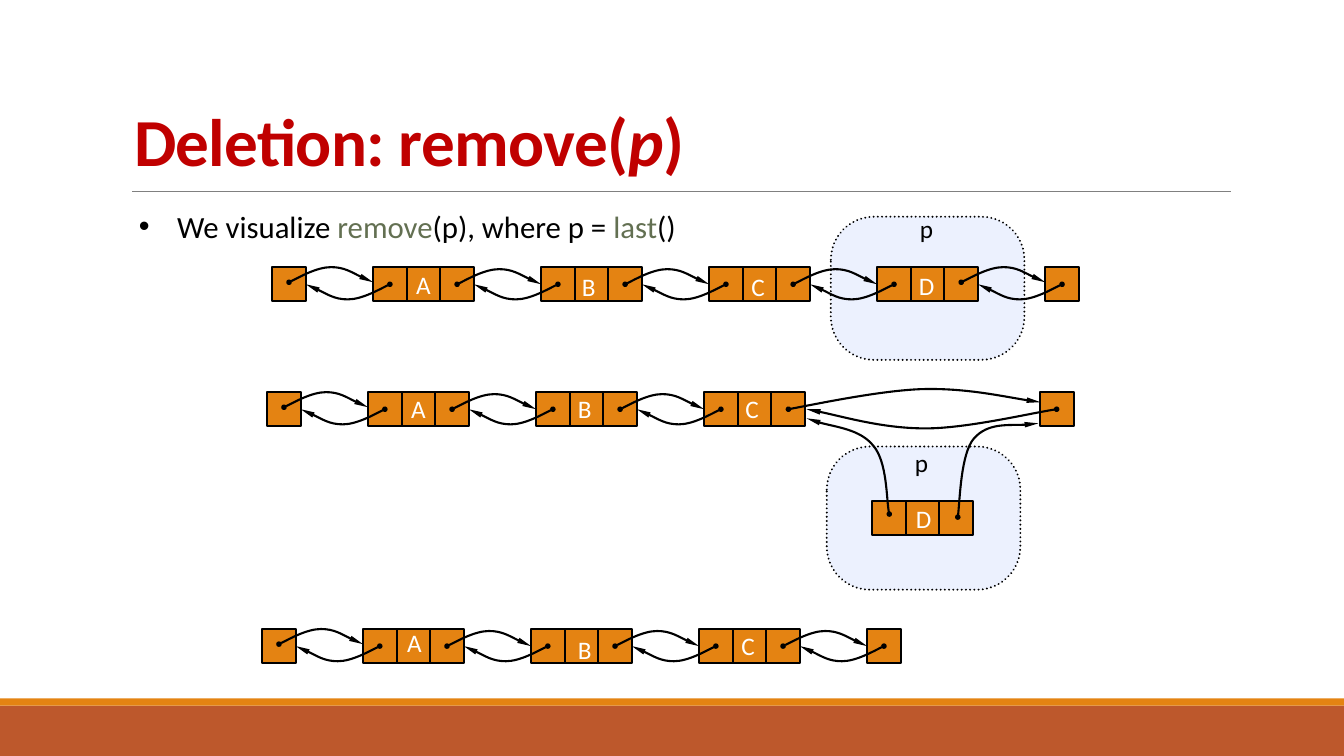
"""Build the slide on removing the last node of a doubly linked list."""
from lxml import etree
from pptx import Presentation, util as u
from pptx.dml.color import RGBColor
from pptx.enum import dml, shapes, text
from pptx.oxml.ns import qn

BLACK = RGBColor(0, 0, 0)
WHITE = RGBColor(255, 255, 255)
RED = RGBColor(0xC0, 0, 0)
OLIVE = RGBColor(0x63, 0x70, 0x52)
GREY = RGBColor(0x80, 0x80, 0x80)
ORANGE = RGBColor(0xE4, 0x83, 0x12)
RUST = RGBColor(0xBD, 0x58, 0x2C)
PALE = RGBColor(0xEC, 0xF1, 0xFE)
CELL = 1 / 3
LABEL = 0.4


def write(tf, runs, size=18, bold=False, align=None, anchor=text.MSO_ANCHOR.TOP, spacing=None):
    """Fill a text frame with (words, colour, italic) runs."""
    tf.word_wrap = True
    tf.vertical_anchor = anchor
    p = tf.paragraphs[0]
    p.alignment = align
    for words, color, italic in runs:
        r = p.add_run()
        r.text = words
        r.font.name, r.font.size = "Calibri", u.Pt(size)
        r.font.bold, r.font.italic = bold, italic
        r.font.color.rgb = color
        if spacing is not None:
            r._r.get_or_add_rPr().set("spc", str(spacing))
    return p


def shape(owner, kind, box, fill, outline=None):
    """Add a filled preset shape, box in inches."""
    sp = owner.shapes.add_shape(kind, *map(u.Inches, box))
    sp.shadow.inherit = False
    sp.fill.solid()
    sp.fill.fore_color.rgb = fill
    if outline is None:
        sp.line.fill.background()
    else:
        sp.line.color.rgb = outline
        sp.line.width = u.Pt(1.5)
    return sp


prs = Presentation()
prs.slide_width, prs.slide_height = u.Inches(13.33), u.Inches(7.5)
s = prs.slides.add_slide(prs.slide_layouts[5])

for top, height, color in ((7, 0.5, RUST), (6.93, 0.07, ORANGE)):
    shape(s, shapes.MSO_SHAPE.RECTANGLE, (0, top, 13.33, height), color)

rule = s.shapes.add_connector(shapes.MSO_CONNECTOR.STRAIGHT, u.Inches(1.31), u.Inches(1.9),
                              u.Inches(12.21), u.Inches(1.9))
rule.line.color.rgb = GREY
rule.line.width = u.Pt(0.5)
etree.SubElement(rule._element.spPr, qn("a:effectLst"))

title = s.shapes.title
title.left, title.top, title.width, title.height = map(u.Inches, (1.23, 0.25, 11, 1.59))
p = write(title.text_frame, [("Deletion: remove(", RED, False), ("p", RED, True), (")", RED, False)],
          size=48, bold=True, align=text.PP_ALIGN.LEFT, anchor=text.MSO_ANCHOR.BOTTOM, spacing=-50)
p.line_spacing = 0.85

body = s.shapes.add_textbox(*map(u.Inches, (1.28, 2.01, 8.5, 0.5)))
p = write(body.text_frame, [("We visualize ", BLACK, False), ("remove", OLIVE, False),
                            ("(p), where p = ", BLACK, False), ("last", OLIVE, False),
                            ("()", BLACK, False)], size=22)
p.space_before = u.Pt(4.4)
pPr = p._p.get_or_add_pPr()
pPr.set("marL", str(u.Inches(0.38)))
pPr.set("indent", str(u.Inches(-0.38)))
etree.SubElement(pPr, qn("a:buFont"), typeface="Arial")
etree.SubElement(pPr, qn("a:buChar"), char="•")

detour = [
    [(7.82, 4.06), (8.04, 4.02), (8.75, 3.87), (9.16, 3.86), (9.58, 3.85), (10.08, 3.96), (10.32, 3.99)],
    [(10.48, 4.06), (10.26, 4.09), (9.59, 4.25), (9.18, 4.25), (8.76, 4.25), (8.24, 4.1), (8, 4.06)],
    [(8.82, 5.1), (8.79, 4.99), (8.8, 4.58), (8.66, 4.42), (8.53, 4.26), (8.13, 4.21), (8, 4.15)],
    [(9.5, 5.13), (9.52, 5), (9.53, 4.5), (9.66, 4.35), (9.8, 4.19), (10.17, 4.23), (10.3, 4.2)],
]
removed = [(8.65 + i * CELL, 4.97) for i in range(3)]
arc = [(0, 0), (0.08, 0.2), (0.33, 1), (0.5, 1), (0.66, 1), (0.9, 0.2), (1, 0)]
chains = [
    (2.7, 2.65, 4, 23, 5, (8.24, 2.15), [], [],
     [("A", 4, 2.62), ("B", 5.64, 2.64), ("C", 7.32, 2.64), ("D", 8.99, 2.63), ("p", 8.99, 2.07)]),
    (2.65, 3.89, 3, 23, 3, (8.2, 4.43), removed, detour,
     [("A", 3.95, 3.85), ("B", 5.6, 3.85), ("C", 7.26, 3.85), ("D", 8.96, 4.94), ("p", 8.94, 4.39)]),
    (2.6, 6.24, 3, 18, 4, None, [], [],
     [("A", 3.91, 6.17), ("B", 5.6, 6.24), ("C", 7.22, 6.2)]),
]
for left, top, nodes, trailer, pairs, region, extra_cells, extra_links, labels in chains:
    group = s.shapes.add_group_shape()
    if region:
        sp = shape(group, shapes.MSO_SHAPE.ROUNDED_RECTANGLE, (*region, 1.92, 1.42), PALE, BLACK)
        sp.adjustments[0] = 0.301
        sp.line.dash_style = dml.MSO_LINE.ROUND_DOT
        sp.line._get_or_add_ln().set("cap", "rnd")

    columns = [0, trailer] + [3 + 5 * n + i for n in range(nodes) for i in range(3)]
    for cell in [(left + c * CELL, top) for c in columns] + extra_cells:
        shape(group, shapes.MSO_SHAPE.RECTANGLE, (*cell, CELL, CELL), ORANGE, BLACK)

    links = list(extra_links)
    for n in range(pairs):
        rise = 0.15 if n in (0, 4) else 0.17
        for column, span, y, bulge in ((0.5, 2.5, rise, -0.15), (3.5, -2.5, 0.17, 0.15)):
            x = left + (5 * n + column) * CELL
            links.append([(x + a * span * CELL, top + y + b * bulge) for a, b in arc])
    for pts in links:
        start, *rest = [(u.Inches(x), u.Inches(y)) for x, y in pts]
        fb = group.shapes.build_freeform(*start)
        fb.add_line_segments(rest, close=False)
        sp = fb.convert_to_shape()
        sp.shadow.inherit = False
        sp.fill.background()
        sp.line.color.rgb = BLACK
        sp.line.width = u.Pt(1.5)
        ln = sp.line._get_or_add_ln()
        etree.SubElement(ln, qn("a:headEnd"), type="oval", w="sm", len="sm")
        etree.SubElement(ln, qn("a:tailEnd"), type="triangle", w="sm", len="lg")
        outline = next(sp._element.iter(qn("a:path")))
        corners = outline.findall(qn("a:lnTo"))
        for i in range(0, len(corners), 3):
            curve = etree.SubElement(outline, qn("a:cubicBezTo"))
            for corner in corners[i:i + 3]:
                curve.append(corner[0])
                outline.remove(corner)

    for name, x, y in labels:
        tb = group.shapes.add_textbox(*map(u.Inches, (x, y, LABEL, LABEL)))
        write(tb.text_frame, [(name, BLACK if name == "p" else WHITE, False)],
              align=text.PP_ALIGN.CENTER)

prs.save("out.pptx")
